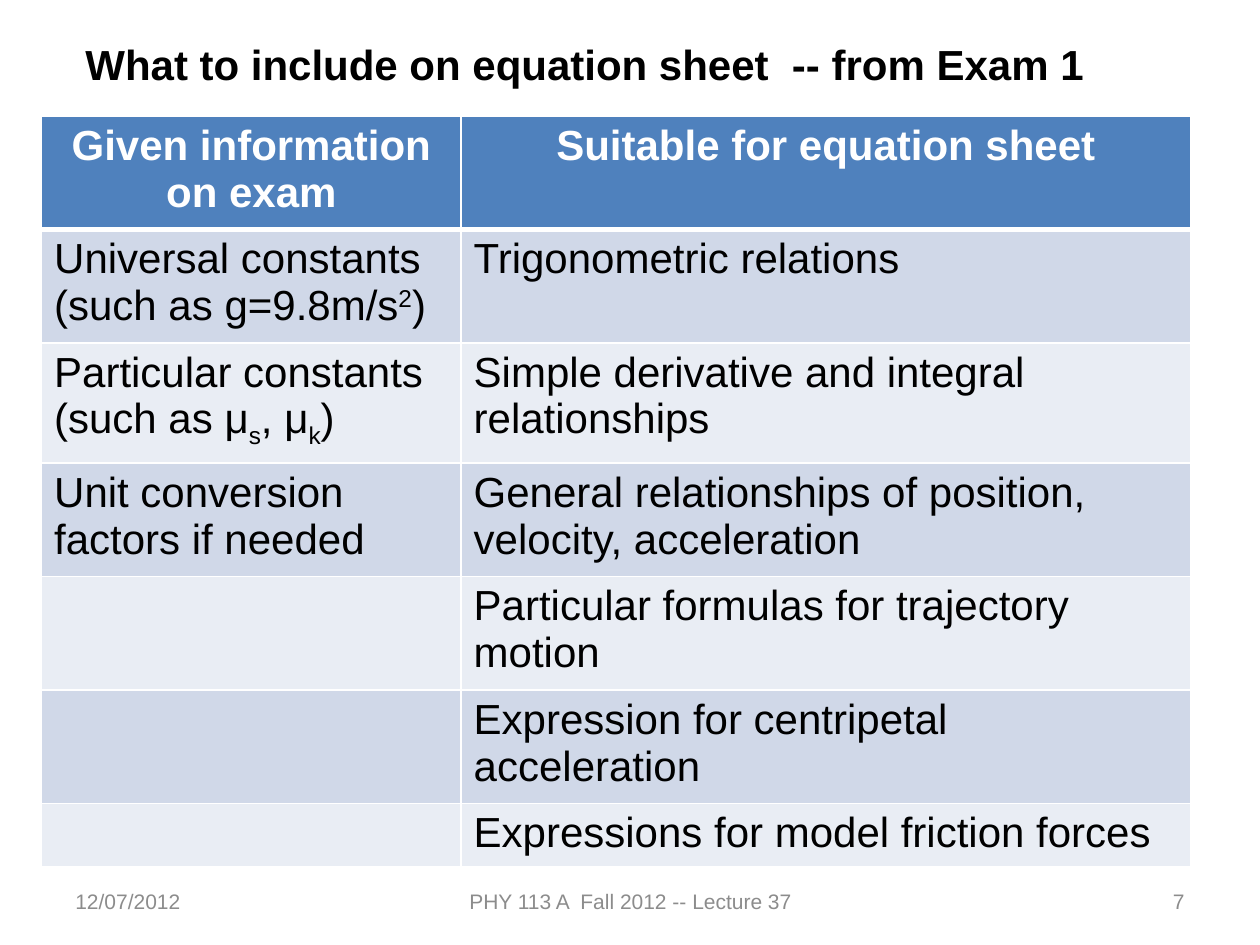
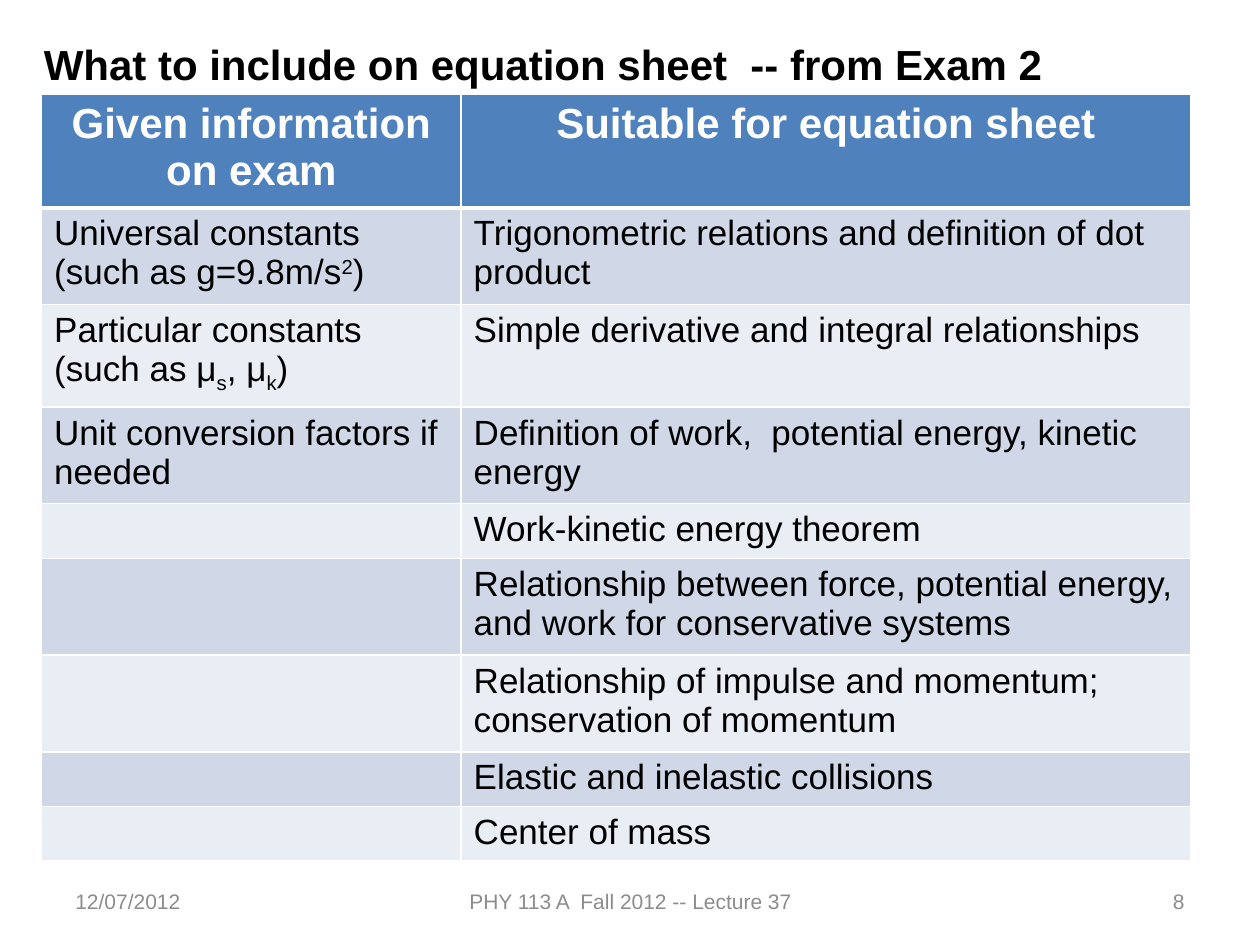
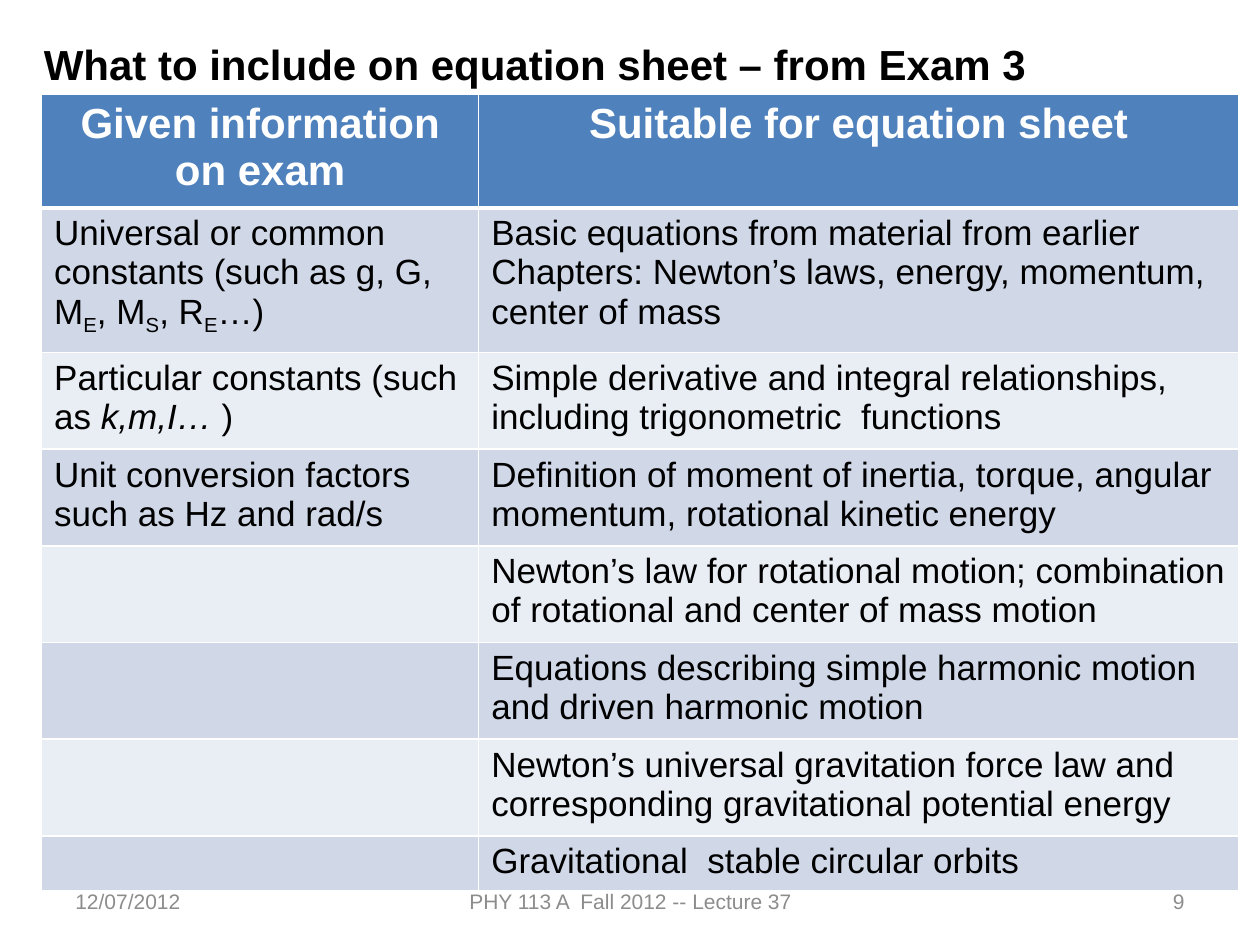
from pptx import Presentation
from pptx.dml.color import RGBColor
from pptx.enum.text import MSO_ANCHOR as Anchor, MSO_AUTO_SIZE as AutoSize, PP_ALIGN as Align
from pptx.oxml.ns import qn
from pptx.util import Inches, Pt
from lxml.etree import SubElement

FONT = "Arial"
WHITE, BLACK, GRAY = "FFFFFF", "000000", "8C8C8C"
HEADER_FILL, BAND_FILLS = "4F81BD", ("D0D8E8", "E9EDF4")
HEADINGS = ("Given information on exam", "Suitable for equation sheet")
FIRST_NUMBER = 7
ROW_HEIGHT = 0.41
SUB, SUPER, ITALIC = "sub", "super", "italic"
BASELINES = {SUB: "-25000", SUPER: "30000"}

GRAVITY = [("Universal constants (such as g=9.8m/s", None), ("2", SUPER), (")", None)]
FRICTION = [("Particular constants (such as μ", None), ("s", SUB), (", μ", None),
            ("k", SUB), (")", None)]
UNITS = "Unit conversion factors if needed"
ASTRONOMY = [("Universal or common constants (such as g, G, M", None), ("E", SUB),
             (", M", None), ("S", SUB), (", R", None), ("E", SUB), ("…)", None)]
OSCILLATOR = [("Particular constants (such as ", None), ("k,m,I… ", ITALIC), (")", None)]

EXAMS = [
    {
        "title": "What to include on equation sheet  -- from Exam 1",
        "title_left": 0.58,
        "box": (0.33, 0.92, 9.13, 5.9),
        "columns": (3.33, 5.79),
        "size": 24,
        "given": [GRAVITY, FRICTION, UNITS],
        "suitable": [
            "Trigonometric relations",
            "Simple derivative and integral relationships",
            "General relationships of position, velocity, acceleration",
            "Particular formulas for trajectory motion",
            "Expression for centripetal acceleration",
            "Expressions for model friction forces",
        ],
    },
    {
        "title": "What to include on equation sheet  -- from Exam 2",
        "title_left": 0.25,
        "box": (0.33, 0.75, 9.13, 6.03),
        "columns": (3.33, 5.79),
        "size": 20,
        "given": [GRAVITY, FRICTION, UNITS],
        "suitable": [
            "Trigonometric relations and definition of dot product",
            "Simple derivative and integral relationships",
            "Definition of work,  potential energy, kinetic energy",
            "Work-kinetic energy theorem",
            "Relationship between force, potential energy, and work for conservative systems",
            "Relationship of impulse and momentum; conservation of momentum",
            "Elastic and inelastic collisions",
            "Center of mass",
        ],
    },
    {
        "title": "What to include on equation sheet – from Exam 3",
        "title_left": 0.25,
        "box": (0.33, 0.75, 9.5, 6.27),
        "columns": (3.47, 6.03),
        "size": 20,
        "given": [ASTRONOMY, OSCILLATOR, "Unit conversion factors such as Hz and rad/s"],
        "suitable": [
            "Basic equations from material from earlier Chapters: Newton’s laws, energy, "
            "momentum, center of mass",
            "Simple derivative and integral relationships, including trigonometric  functions",
            "Definition of moment of inertia, torque, angular momentum, rotational kinetic energy",
            "Newton’s law for rotational motion; combination of rotational and center of mass motion",
            "Equations describing simple harmonic motion and driven harmonic motion",
            "Newton’s universal gravitation force law and corresponding gravitational potential energy",
            "Gravitational  stable circular orbits",
        ],
    },
]


def color(value):
    return RGBColor.from_string(value)


def write(para, content, size, ink, bold=False, align=Align.LEFT):
    para.alignment = align
    font = para.font
    font.name, font.size, font.bold = FONT, Pt(size), bold
    font.color.rgb = color(ink)
    spans = [(content, None)] if isinstance(content, str) else content
    for text, style in spans:
        span = para.add_run()
        span.text = text
        if style == ITALIC:
            span.font.italic = True
        elif style:
            span._r.get_or_add_rPr().set("baseline", BASELINES[style])


def add_text(page, box, content, size, ink, bold=False, align=Align.LEFT, anchor=Anchor.TOP):
    frame = page.shapes.add_textbox(*map(Inches, box)).text_frame
    frame.word_wrap = True
    frame.vertical_anchor = anchor
    write(frame.paragraphs[0], content, size, ink, bold, align)
    return frame


def add_title(page, left, title):
    frame = add_text(page, (left, 0.26, 8.5, 0.5), title, 24, BLACK, bold=True)
    frame.auto_size = AutoSize.SHAPE_TO_FIT_TEXT


def add_footer(page, number):
    parts = [
        (0.5, 2.33, "12/07/2012", Align.LEFT),
        (3.42, 3.17, "PHY 113 A  Fall 2012 -- Lecture 37", Align.CENTER),
        (7.17, 2.33, str(number), Align.RIGHT),
    ]
    for left, width, text, align in parts:
        add_text(page, (left, 6.95, width, 0.4), text, 12, GRAY, align=align,
                 anchor=Anchor.MIDDLE)


def set_borders(cell, top, bottom):
    props = cell._tc.get_or_add_tcPr()
    widths = {"a:lnL": 1, "a:lnR": 1, "a:lnT": top, "a:lnB": bottom}
    for index, (tag, width) in enumerate(widths.items()):
        line = SubElement(props, qn(tag), w=str(Pt(width)))
        fill = SubElement(line, qn("a:solidFill"))
        SubElement(fill, qn("a:srgbClr"), val=WHITE)
        props.insert(index, line)


def add_equation_table(page, box, columns, size, given, suitable):
    missing = len(suitable) - len(given)
    rows = [HEADINGS, *zip(given + [""] * missing, suitable)]
    shape = page.shapes.add_table(len(rows), len(columns), *map(Inches, box))
    table = shape.table
    for column, width in zip(table.columns, columns):
        column.width = Inches(width)
    for index, contents in enumerate(rows):
        table.rows[index].height = Inches(ROW_HEIGHT)
        header = index == 0
        for cell, content in zip(table.rows[index].cells, contents):
            cell.fill.solid()
            cell.fill.fore_color.rgb = color(HEADER_FILL if header else BAND_FILLS[(index - 1) % 2])
            set_borders(cell, 3 if index == 1 else 1, 3 if header else 1)
            para = cell.text_frame.paragraphs[0]
            if header:
                write(para, content, 24, WHITE, True, Align.CENTER)
            elif content:
                write(para, content, size, BLACK)
    shape.height = Inches(box[3])


def add_exam_slide(deck, exam, number):
    page = deck.slides.add_slide(deck.slide_layouts[6])
    add_footer(page, number)
    add_title(page, exam["title_left"], exam["title"])
    add_equation_table(page, exam["box"], exam["columns"], exam["size"],
                       exam["given"], exam["suitable"])


def main():
    deck = Presentation()
    deck.slide_width, deck.slide_height = Inches(10), Inches(7.5)
    for number, exam in enumerate(EXAMS, FIRST_NUMBER):
        add_exam_slide(deck, exam, number)
    deck.save("out.pptx")


if __name__ == "__main__":
    main()
